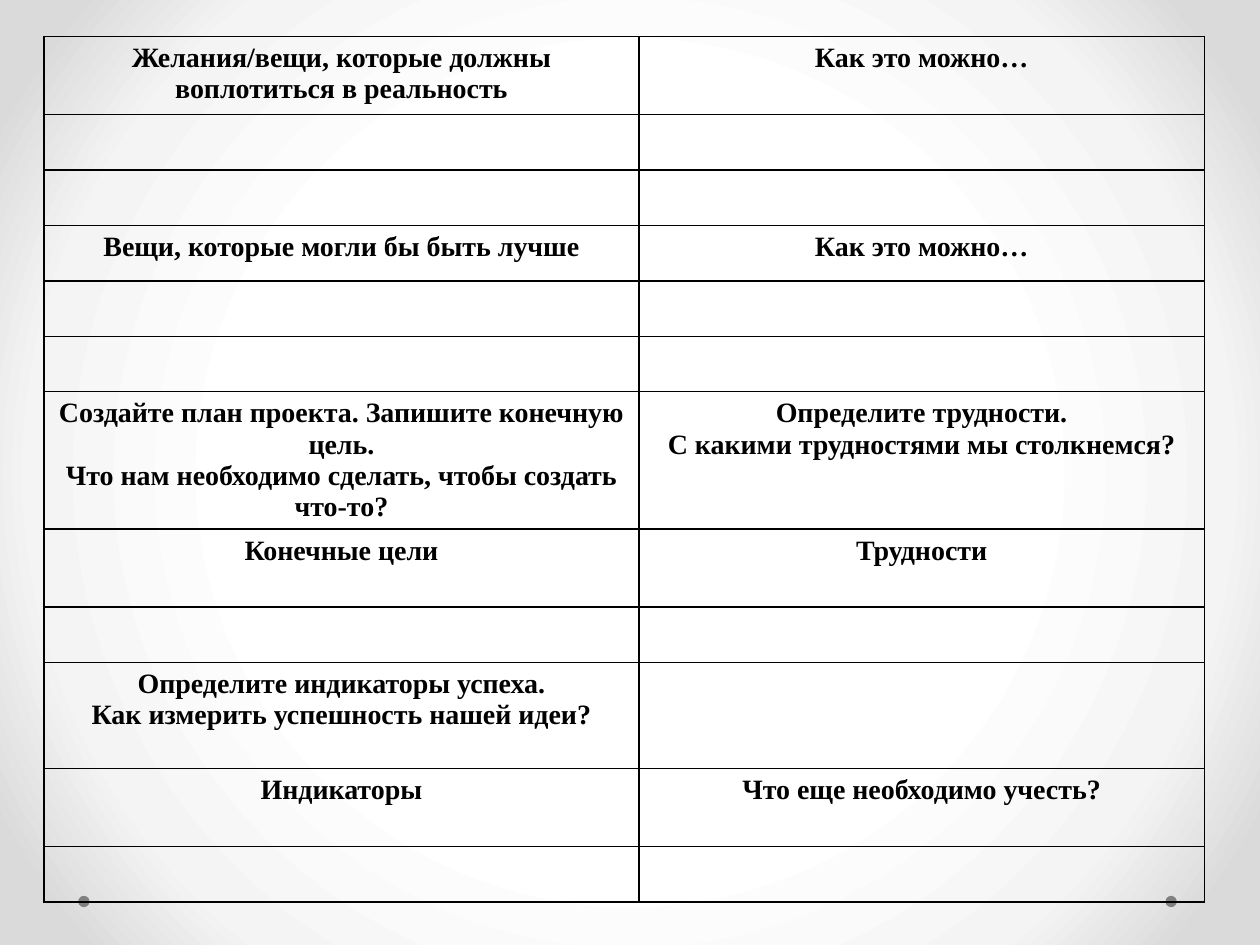
from pptx import Presentation
from pptx import util as u
from pptx.dml.color import RGBColor
from pptx.enum import shapes, text
from pptx.oxml import parse_xml
from pptx.oxml.ns import nsdecls

COLORS = {"ink": "000000", "dot": "808080",
          "center": "FFFFFF", "ring": "F4F4F4", "edge": "DADADA"}
FONT = "Times New Roman"
SLIDE_W, SLIDE_H = 10, 7.5

# Table grid, in inches
LEFT, TOP = 0.35, 0.29
COLUMNS = [4.72, 4.49]
BLANK, HEADING, SUCCESS, PLAN = 0.44, 0.62, 0.84, 1.09
HOW = ["Как это можно…"]
EMPTY = (BLANK, [], [])

# Each row: height, paragraphs on the left, paragraphs on the right
WORKSHEET = [
    (HEADING, ["Желания/вещи, которые должны воплотиться в реальность"], HOW),
    EMPTY,
    EMPTY,
    (BLANK, ["Вещи, которые могли бы быть лучше"], HOW),
    EMPTY,
    EMPTY,
    (PLAN,
     ["Создайте план проекта. Запишите конечную цель.",
      "Что нам необходимо сделать, чтобы создать что-то?"],
     ["Определите трудности.", "С какими трудностями мы столкнемся?"]),
    (HEADING, ["Конечные цели"], ["Трудности"]),
    EMPTY,
    (SUCCESS,
     ["Определите индикаторы успеха.", "Как измерить успешность нашей идеи?"],
     []),
    (HEADING, ["Индикаторы"], ["Что еще необходимо учесть?"]),
    EMPTY,
]


def paint_background(slide):
    """Radial gradient, white in the middle."""
    stops = "".join(
        f'<a:gs pos="{share * 1000}"><a:srgbClr val="{COLORS[name]}"/></a:gs>'
        for share, name in [(50, "center"), (76, "ring"), (92, "edge")])
    background = parse_xml(
        f'<p:bg {nsdecls("p", "a")}><p:bgPr><a:gradFill rotWithShape="1">'
        f'<a:gsLst>{stops}</a:gsLst><a:path path="circle">'
        '<a:fillToRect l="50000" t="50000" r="50000" b="50000"/></a:path>'
        '</a:gradFill><a:effectLst/></p:bgPr></p:bg>')
    slide.element.cSld.insert(0, background)


def add_dot(slide, left):
    size = u.Inches(0.09)
    dot = slide.shapes.add_shape(shapes.MSO_SHAPE.OVAL, u.Inches(left),
                                 u.Inches(0.948 * SLIDE_H), size, size)
    dot.shadow.inherit = False
    dot.fill.solid()
    dot.fill.fore_color.rgb = RGBColor.from_string(COLORS["dot"])
    dot.line.fill.background()


def write_cell(cell, lines):
    frame = cell.text_frame
    for index, line in enumerate(lines):
        paragraph = frame.add_paragraph() if index else frame.paragraphs[0]
        paragraph.alignment = text.PP_ALIGN.CENTER
        run = paragraph.add_run()
        run.text = line
        run.font.name = FONT
        run.font.size = u.Pt(16)
        run.font.bold = True
        run.font.color.rgb = RGBColor.from_string(COLORS["ink"])


def border_cell(cell):
    properties = cell._tc.get_or_add_tcPr()
    for position, side in enumerate(("lnL", "lnR", "lnT", "lnB")):
        properties.insert(position, parse_xml(
            f'<a:{side} {nsdecls("a")} w="{u.Pt(1)}"><a:solidFill>'
            f'<a:srgbClr val="{COLORS["ink"]}"/></a:solidFill></a:{side}>'))


def add_worksheet(slide):
    heights = [row[0] for row in WORKSHEET]
    table = slide.shapes.add_table(
        len(WORKSHEET), len(COLUMNS), u.Inches(LEFT), u.Inches(TOP),
        u.Inches(sum(COLUMNS)), u.Inches(sum(heights))).table
    table.first_row = table.horz_banding = False
    for column, width in zip(table.columns, COLUMNS):
        column.width = u.Inches(width)
    for row, (height, *contents) in zip(table.rows, WORKSHEET):
        row.height = u.Inches(height)
        for cell, lines in zip(row.cells, contents):
            cell.fill.background()
            border_cell(cell)
            write_cell(cell, lines)


def main():
    deck = Presentation()
    deck.slide_width, deck.slide_height = u.Inches(SLIDE_W), u.Inches(SLIDE_H)
    slide = deck.slides.add_slide(deck.slide_layouts[6])
    paint_background(slide)
    # Footer dots lie behind the table
    for left in (0.925 * SLIDE_W, 0.062 * SLIDE_W):
        add_dot(slide, left)
    add_worksheet(slide)
    deck.save("out.pptx")


if __name__ == "__main__":
    main()
